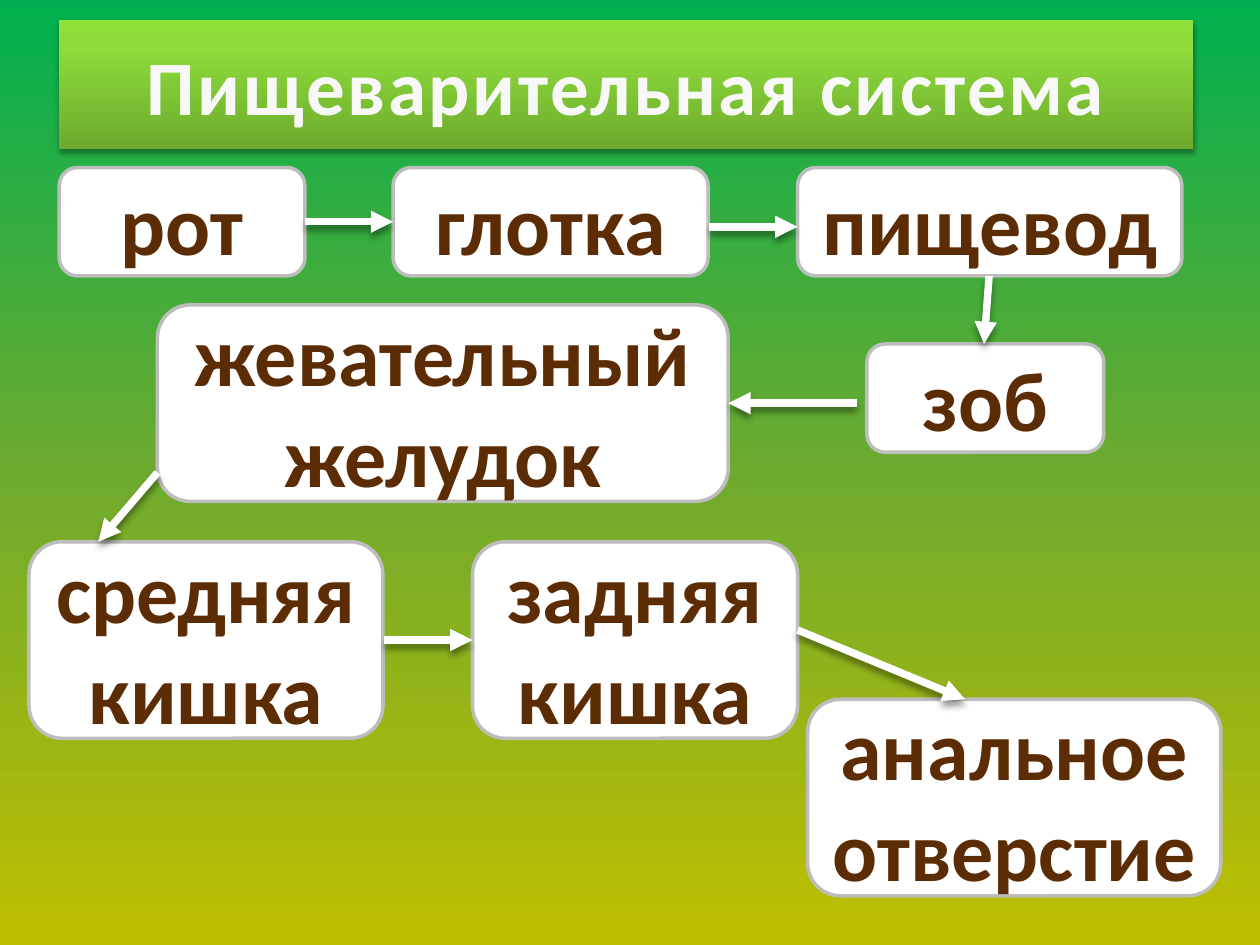
from lxml import etree
from pptx import Presentation
from pptx.dml.color import RGBColor
from pptx.enum.shapes import MSO_CONNECTOR, MSO_SHAPE
from pptx.enum.text import MSO_ANCHOR, PP_ALIGN
from pptx.oxml.ns import qn
from pptx.util import Inches, Pt

RECTANGLE = MSO_SHAPE.RECTANGLE
ROUNDED = MSO_SHAPE.ROUNDED_RECTANGLE
STRAIGHT = MSO_CONNECTOR.STRAIGHT
MIDDLE = MSO_ANCHOR.MIDDLE
CENTER = PP_ALIGN.CENTER

WHITE = RGBColor(0xFF, 0xFF, 0xFF)
BLACK = RGBColor(0x00, 0x00, 0x00)
TITLE_TEXT = RGBColor(0xF8, 0xF8, 0xF8)
BROWN = RGBColor(0x5C, 0x2C, 0x04)
GRAY = RGBColor(0xBD, 0xBD, 0xBD)
PAGE_STOPS = [
    (0, RGBColor(0x00, 0xB0, 0x50)),
    (50, RGBColor(0x6E, 0xAA, 0x2E)),
    (100, RGBColor(0xBF, 0xBF, 0x00)),
]
TITLE_STOPS = [
    (0, RGBColor(0x6D, 0xAA, 0x2D)),
    (80, RGBColor(0x8E, 0xDC, 0x3B)),
    (100, RGBColor(0x8F, 0xE0, 0x38)),
]

FONT = "Calibri"
LOW, TALL = 0.86, 1.56
TOP_ROW, BOTTOM_ROW = 1.33, 4.3

ORGANS = [
    ("рот", 0.47, TOP_ROW, 1.95, LOW),
    ("зоб", 6.88, 2.73, 1.88, LOW),
    ("глотка", 3.12, TOP_ROW, 2.5, LOW),
    ("пищевод", 6.33, TOP_ROW, 3.05, LOW),
    ("жевательный желудок", 1.25, 2.42, 4.53, TALL),
    ("средняя кишка", 0.23, BOTTOM_ROW, 2.81, TALL),
    ("задняя кишка", 3.75, BOTTOM_ROW, 2.58, TALL),
    ("анальное отверстие", 6.41, 5.55, 3.28, TALL),
]
ARROWS = [
    (2.42, 1.76, 3.12, 1.76),
    (5.63, 1.8, 6.33, 1.8),
    (7.85, 2.19, 7.81, 2.73),
    (6.8, 3.2, 5.78, 3.2),
    (1.25, 3.75, 0.78, 4.3),
    (3.05, 5.08, 3.75, 5.08),
    (6.33, 5, 7.66, 5.55),
]


def add_child(parent, tag, **attributes):
    child = etree.SubElement(parent, qn(tag))
    for name, value in attributes.items():
        child.set(name, str(value))
    return child


def add_color(parent, color):
    return add_child(parent, "a:srgbClr", val=color)


def set_gradient(fill, element, stops, angle):
    fill.gradient()
    fill.gradient_angle = angle
    stop_list = element.xpath(".//a:gsLst")[0]
    for stop in list(stop_list):
        stop_list.remove(stop)
    for position, color in stops:
        add_color(add_child(stop_list, "a:gs", pos=position * 1000), color)


def add_shadow(effects, opacity, blur, distance):
    shadow = add_child(effects, "a:outerShdw", blurRad=Pt(blur), dist=Pt(distance),
                       dir=90 * 60000, algn="ctr", rotWithShape=0)
    add_child(add_color(shadow, BLACK), "a:alpha", val=opacity * 1000)


def add_box(page, kind, left, top, width, height):
    box = page.shapes.add_shape(kind, Inches(left), Inches(top),
                                Inches(width), Inches(height))
    box.shadow.inherit = False
    return box


def write_text(box, text, size, color):
    frame = box.text_frame
    frame.word_wrap = True
    frame.vertical_anchor = MIDDLE
    para = frame.paragraphs[0]
    para.alignment = CENTER
    span = para.add_run()
    span.text = text
    span.font.name = FONT
    span.font.size = Pt(size)
    span.font.bold = True
    span.font.color.rgb = color
    return span


def add_title(page, text):
    box = add_box(page, RECTANGLE, 0.47, 0.16, 9, 1.02)
    set_gradient(box.fill, box.element, TITLE_STOPS, 90)
    box.line.fill.background()
    add_shadow(box.element.spPr.find(qn("a:effectLst")), 35, 3.1, 1.8)
    span = write_text(box, text, 44, TITLE_TEXT)
    span.font._element.set("spc", "150")


def add_organ(page, text, left, top, width, height):
    box = add_box(page, ROUNDED, left, top, width, height)
    box.fill.solid()
    box.fill.fore_color.rgb = WHITE
    box.line.color.rgb = GRAY
    box.line.width = Pt(2)
    write_text(box, text, 48, BROWN)


def add_arrow(page, start_x, start_y, end_x, end_y):
    arrow = page.shapes.add_connector(STRAIGHT, Inches(start_x), Inches(start_y),
                                      Inches(end_x), Inches(end_y))
    arrow.line.color.rgb = WHITE
    arrow.line.width = Pt(4.25)
    properties = arrow.element.spPr
    add_child(properties.find(qn("a:ln")), "a:tailEnd", type="triangle")
    add_shadow(add_child(properties, "a:effectLst"), 40, 4, 3)


def main():
    deck = Presentation()
    deck.slide_width = Inches(10)
    deck.slide_height = Inches(7.5)
    page = deck.slides.add_slide(deck.slide_layouts[6])
    set_gradient(page.background.fill, page.element, PAGE_STOPS, 270)
    add_title(page, "Пищеварительная система")
    for organ in ORGANS:
        add_organ(page, *organ)
    for arrow in ARROWS:
        add_arrow(page, *arrow)
    deck.save("out.pptx")


if __name__ == "__main__":
    main()
